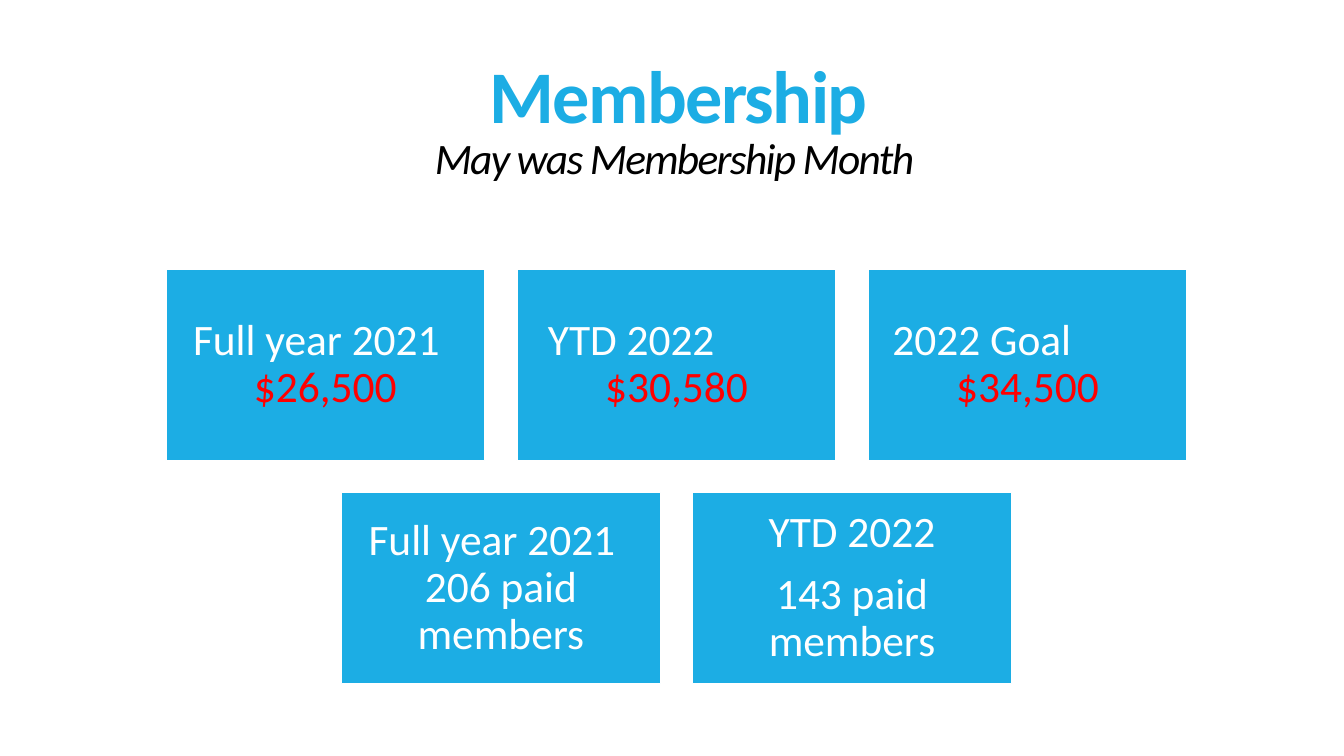
"""Build the membership slide: a title above two centred rows of figure cards."""
from pptx import Presentation
from pptx.dml.color import RGBColor
from pptx.enum.shapes import MSO_SHAPE
from pptx.enum.text import MSO_ANCHOR, PP_ALIGN
from pptx.util import Pt

BLUE, WHITE, RED, BLACK = "1CADE4", "FFFFFF", "FF0000", "000000"


def rgb(value):
    return RGBColor.from_string(value)


def add_line(paragraph, text, size, color, spacing):
    paragraph.alignment = PP_ALIGN.CENTER
    paragraph.line_spacing = spacing
    run = paragraph.add_run()
    run.text = text
    run.font.name = "Calibri"
    run.font.size = Pt(size)
    run.font.color.rgb = rgb(color)
    return run


presentation = Presentation()
presentation.slide_width, presentation.slide_height = Pt(960), Pt(540)
slide = presentation.slides.add_slide(presentation.slide_layouts[6])

heading = slide.shapes.add_textbox(Pt(89.3), Pt(39.6), Pt(790.6), Pt(96.5)).text_frame
heading.word_wrap = True
heading.vertical_anchor = MSO_ANCHOR.MIDDLE
membership = add_line(heading.paragraphs[0], "Membership", 53, BLUE, 0.85)
membership.font.bold = True
month = add_line(heading.add_paragraph(), "May was Membership Month ", 31, BLACK, 0.85)
month.font.italic = True
for heading_run in (membership, month):
    heading_run._r.get_or_add_rPr().set("spc", "-120")

# label, left indent (None centres the label), figure, figure colour, gap above figure
card_rows = [
    [
        ("Full year 2021", 10, "$26,500", RED, 0),
        ("YTD 2022", 12.7, "$30,580", RED, 0),
        ("2022 Goal", 8, "$34,500", RED, 0),
    ],
    [
        ("Full year 2021", 10, "206 paid members", WHITE, 0),
        ("YTD 2022", None, "143 paid members", WHITE, 10.8),
    ],
]
card_width, card_height, gap = 227.8, 136.6, 23
rows_center, rows_top = 483.2, 192.2

for row, cards in enumerate(card_rows):
    row_width = len(cards) * (card_width + gap) - gap
    row_left = rows_center - row_width / 2
    top = rows_top + row * (card_height + gap)
    for column, (label, indent, figure, figure_color, figure_gap) in enumerate(cards):
        left = row_left + column * (card_width + gap)
        card = slide.shapes.add_shape(
            MSO_SHAPE.RECTANGLE, Pt(left), Pt(top), Pt(card_width), Pt(card_height))
        card.shadow.inherit = False
        card.fill.solid()
        card.fill.fore_color.rgb = rgb(BLUE)
        card.line.color.rgb = rgb(WHITE)
        card.line.width = Pt(1)

        content = card.text_frame
        content.word_wrap = True
        content.vertical_anchor = MSO_ANCHOR.MIDDLE
        content.margin_left = content.margin_right = Pt(9.4)
        content.margin_top = content.margin_bottom = Pt(9.4)

        label_line = content.paragraphs[0]
        add_line(label_line, label, 31, WHITE, 0.9)
        if indent is not None:
            label_line.alignment = PP_ALIGN.LEFT
            label_line._p.get_or_add_pPr().set("marL", str(Pt(indent)))
        figure_line = content.add_paragraph()
        add_line(figure_line, figure, 31, figure_color, 0.9)
        figure_line.space_before = Pt(figure_gap)

presentation.save("out.pptx")
